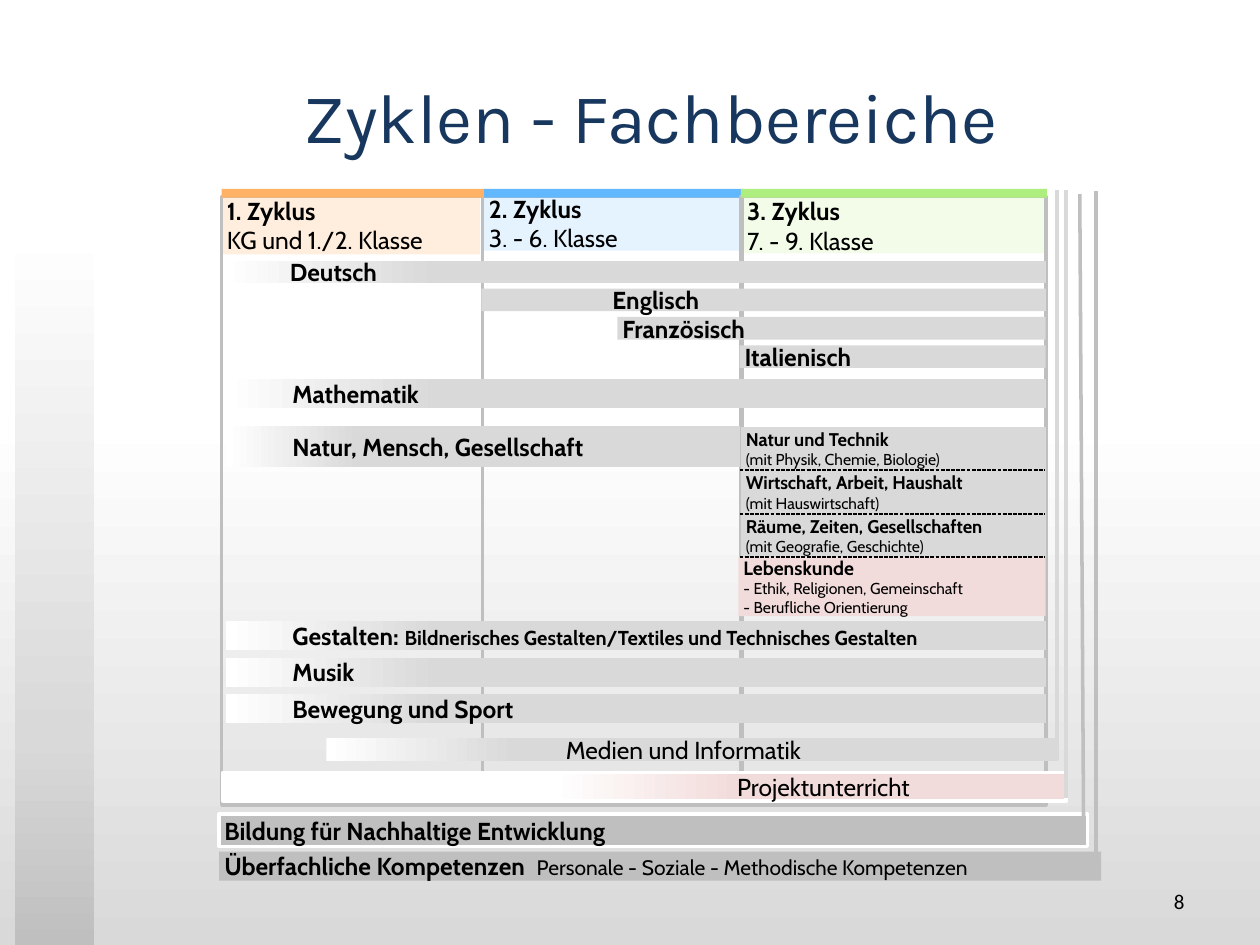
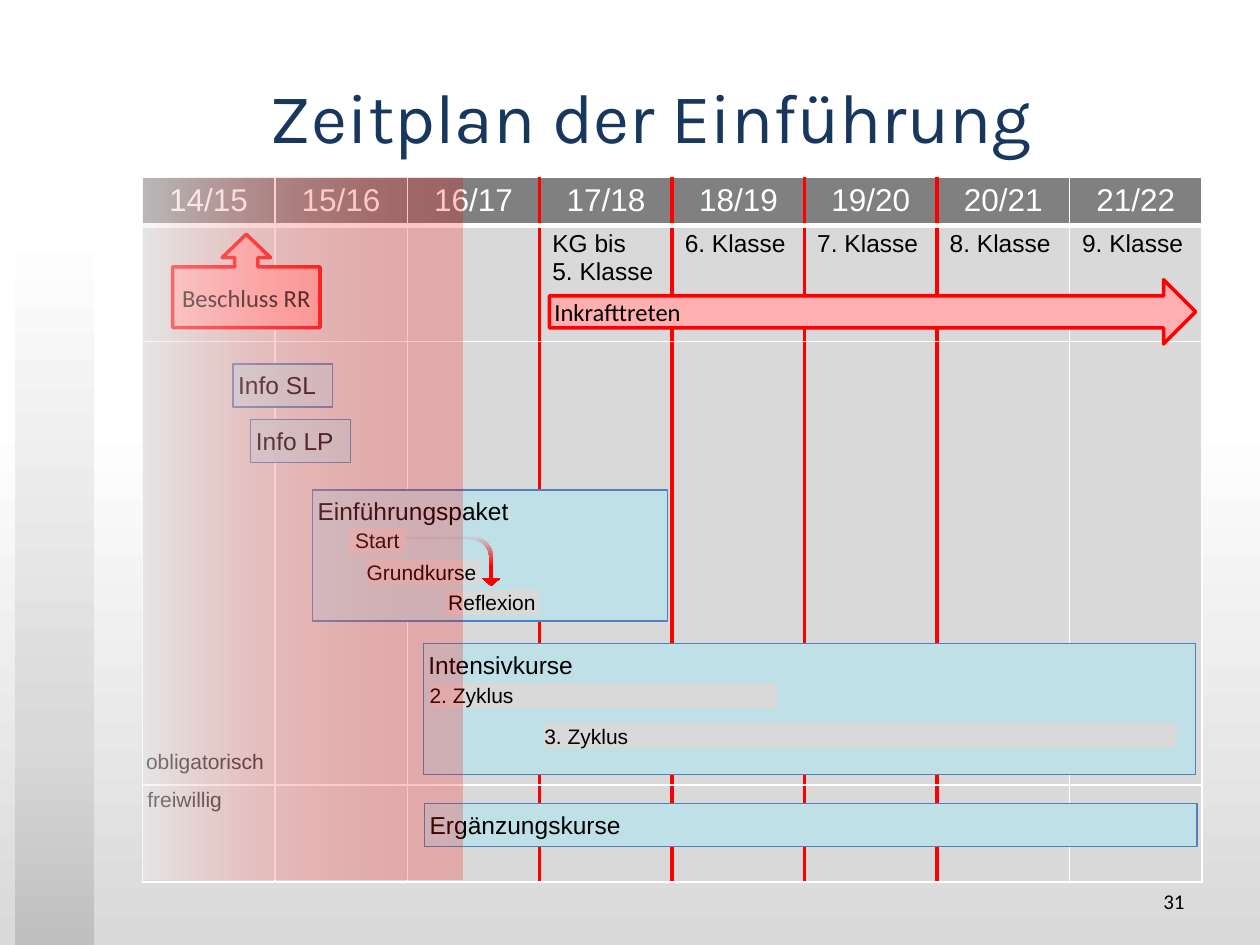
from dataclasses import dataclass
from typing import NamedTuple, Optional, Union

import pptx
import pptx.dml.color
import pptx.enum.dml
import pptx.enum.shapes
import pptx.enum.text
import pptx.oxml.ns
import pptx.util
from lxml import etree

RGBColor = pptx.dml.color.RGBColor
Preset = pptx.enum.shapes.MSO_SHAPE
Align = pptx.enum.text.PP_ALIGN
Anchor = pptx.enum.text.MSO_ANCHOR
qn = pptx.oxml.ns.qn

# Grid: 100 columns by 75 rows cover the slide
WIDTH, HEIGHT = pptx.util.Inches(10), pptx.util.Inches(7.5)
CELL = WIDTH // 100

# Colours
BLACK = RGBColor(0x00, 0x00, 0x00)
WHITE = RGBColor(0xFF, 0xFF, 0xFF)
NAVY = RGBColor(0x17, 0x37, 0x5E)
MIST = RGBColor(0xF2, 0xF2, 0xF2)
LIGHT = RGBColor(0xD9, 0xD9, 0xD9)
SILVER = RGBColor(0xBF, 0xBF, 0xBF)
GREY = RGBColor(0x80, 0x80, 0x80)
ROSE = RGBColor(0xF2, 0xDC, 0xDB)
RED = RGBColor(0xFF, 0x00, 0x00)
PINK = RGBColor(0xFF, 0xAF, 0xAF)
AQUA = RGBColor(0xBF, 0xE0, 0xE7)
STEEL = RGBColor(0x4F, 0x81, 0xBD)
ORANGE, CREAM = RGBColor(0xFF, 0xB2, 0x65), RGBColor(0xFF, 0xEE, 0xDD)
BLUE, ICE = RGBColor(0x61, 0xB8, 0xFF), RGBColor(0xE5, 0xF3, 0xFF)
GREEN, LIME = RGBColor(0xAE, 0xEE, 0x7E), RGBColor(0xF3, 0xFC, 0xE8)


class Area(NamedTuple):
    column: float
    row: float
    columns: float
    rows: float


class Stop(NamedTuple):
    position: int
    color: RGBColor
    opacity: int = 100


class Gradient(NamedTuple):
    stops: tuple[Stop, ...]
    angle: int = 0


class Span(NamedTuple):
    text: str
    size: float = 14
    bold: bool = True
    name: str = "Cabin"
    color: RGBColor = BLACK


class Edge(NamedTuple):
    color: RGBColor
    weight: float
    dash: Optional[pptx.enum.dml.MSO_LINE] = None


@dataclass(frozen=True)
class Box:
    area: Area
    lines: tuple[tuple[Span, ...], ...] = ()
    fill: Union[RGBColor, Gradient, None] = None
    edge: Optional[Edge] = None
    preset: Optional[Preset] = Preset.RECTANGLE
    align: Align = Align.LEFT
    anchor: Anchor = Anchor.MIDDLE
    inset: tuple[float, float] = (0.4, 0.4)
    indent: float = 0
    tab: float = 0
    adjust: tuple[float, ...] = ()
    turn: float = 0


BACKDROP = Gradient((Stop(0, WHITE), Stop(44, WHITE), Stop(100, LIGHT)), 90)
SIDE_BAND = Gradient((Stop(24, WHITE), Stop(78, LIGHT), Stop(100, SILVER)), 90)
FADE_IN = Gradient((Stop(0, WHITE), Stop(26, LIGHT), Stop(100, LIGHT)))
PROJECT_FADE = Gradient((Stop(39, WHITE), Stop(61, ROSE), Stop(100, ROSE)))
ARROW_FADE = Gradient((Stop(0, AQUA), Stop(61, RED)))
PAST_FADE = Gradient((Stop(0, MIST, 50), Stop(98, RED, 21)))
FRAME = Edge(SILVER, 2)


# Helpers
def grid(count: float) -> int:
    return round(count * CELL)


def apply(target, values: dict) -> None:
    for name, value in values.items():
        setattr(target, name, value)


def paint(owner, fill, look: Union[RGBColor, Gradient, None]) -> None:
    if look is None:
        fill.background()
    elif isinstance(look, RGBColor):
        fill.solid()
        fill.fore_color.rgb = look
    else:
        fill.gradient()
        gradient = next(owner.iter(qn("a:gradFill")))
        stops = gradient.find(qn("a:gsLst"))
        for old in list(stops):
            stops.remove(old)
        for stop in look.stops:
            mark = etree.SubElement(stops, qn("a:gs"), pos=str(stop.position * 1000))
            color = etree.SubElement(mark, qn("a:srgbClr"), val=str(stop.color))
            if stop.opacity < 100:
                etree.SubElement(color, qn("a:alpha"), val=str(stop.opacity * 1000))
        gradient.find(qn("a:lin")).set("ang", str(look.angle * 60000))


def write(frame, lines: tuple, align: Align, indent: float = 0, tab: float = 0) -> None:
    for index, spans in enumerate(lines):
        para = frame.add_paragraph() if index else frame.paragraphs[0]
        para.alignment = align
        properties = para._p.get_or_add_pPr()
        if indent:
            properties.set("marL", str(grid(indent)))
            properties.set("indent", "0")
        if tab:
            tabs = etree.SubElement(properties, qn("a:tabLst"))
            etree.SubElement(tabs, qn("a:tab"), pos=str(grid(tab)), algn="l")
        for span in spans:
            run = para.add_run()
            run.text = span.text
            apply(run.font, {"size": pptx.util.Pt(span.size), "bold": span.bold, "name": span.name})
            run.font.color.rgb = span.color


def draw_edge(line, edge: Optional[Edge]) -> None:
    if edge is None:
        line.fill.background()
        return
    line.color.rgb = edge.color
    line.width = pptx.util.Pt(edge.weight)
    if edge.dash is not None:
        line.dash_style = edge.dash


def draw_box(page, box: Box) -> None:
    place = [grid(value) for value in box.area]
    if box.preset is None:
        shape = page.shapes.add_textbox(*place)
    else:
        shape = page.shapes.add_shape(box.preset, *place)
        shape.shadow.inherit = False
        paint(shape._element.spPr, shape.fill, box.fill)
        draw_edge(shape.line, box.edge)
        for index, value in enumerate(box.adjust):
            shape.adjustments[index] = value
        shape.rotation = box.turn
    side, top = map(grid, box.inset)
    apply(shape.text_frame, {
        "word_wrap": True, "vertical_anchor": box.anchor,
        "margin_left": side, "margin_right": side, "margin_top": top, "margin_bottom": top})
    write(shape.text_frame, box.lines, box.align, box.indent, box.tab)


def draw_line(page, start: tuple[float, float], end: tuple[float, float], edge: Edge) -> None:
    line = page.shapes.add_connector(
        pptx.enum.shapes.MSO_CONNECTOR.STRAIGHT, *map(grid, start + end))
    draw_edge(line.line, edge)
    etree.SubElement(line._element.spPr, qn("a:effectLst"))


def border(cell, sides: dict[str, Edge]) -> None:
    properties = cell._tc.get_or_add_tcPr()
    for index, (side, edge) in enumerate(sides.items()):
        line = etree.Element(qn(f"a:ln{side}"), w=str(pptx.util.Pt(edge.weight)))
        solid = etree.SubElement(line, qn("a:solidFill"))
        etree.SubElement(solid, qn("a:srgbClr"), val=str(edge.color))
        properties.insert(index, line)


def new_page(deck, title: str, number: str):
    page = deck.slides.add_slide(deck.slide_layouts[6])
    paint(page._element, page.background.fill, BACKDROP)
    draw_box(page, Box(Area(1.2, -0.1, 6.3, 75.1), fill=SIDE_BAND))
    draw_box(page, Box(Area(8.3, 4.5, 86.7, 9.3), ((Span(title, 40, False, "Karla", NAVY),),),
                       preset=None, align=Align.CENTER, inset=(1, 0.5)))
    draw_box(page, Box(Area(71.7, 69.5, 23.3, 4), ((Span(number, 12, False, "Calibri"),),),
                       preset=None, align=Align.RIGHT, inset=(1, 0.5)))
    return page


# Slide: cycles and subjects
def subjects_page(deck) -> None:
    page = new_page(deck, "Zyklen - Fachbereiche", "8")
    right = 83

    # Cycle columns: headings first, then frames and coloured caps
    cycles = (
        ("2. Zyklus", "3. - 6. Klasse", Area(38.4, 15.5, 20.3, 4.4), ICE, BLUE, 38.3, 20.6),
        ("1. Zyklus", "KG und 1./2. Klasse", Area(17.6, 15.6, 20.5, 4.6), CREAM, ORANGE, 17.6, 20.7),
        ("3. Zyklus", "7. - 9. Klasse", Area(58.9, 15.7, 24.2, 4.4), LIME, GREEN, 58.8, 24.2),
    )
    for name, classes, area, tint, *_ in cycles:
        draw_box(page, Box(area, ((Span(name),), (Span(classes, bold=False),)), tint))
    for *_, cap, column, columns in cycles:
        draw_box(page, Box(Area(column, 15.6, columns, 48.3), edge=FRAME))
        draw_box(page, Box(Area(column, 15, columns + 0.1, 0.7), fill=cap))

    # Foreign languages, each starting later
    languages = (("Englisch", 38.2, 10), ("Französisch", 49, 0), ("Italienisch", 58.7, 0))
    for index, (name, column, indent) in enumerate(languages):
        draw_box(page, Box(Area(column, 22.9 + 2.25 * index, right - column, 1.8),
                           ((Span(name),),), LIGHT, indent=indent))

    # Subjects of the third cycle, divided by dashes
    fields = (
        (10.5, "Natur und Technik", "(mit Physik, Chemie, Biologie)"),
        (10.5, "Wirtschaft, Arbeit, Haushalt", "(mit Hauswirtschaft)"),
        (10.5, "Räume, Zeiten, Gesellschaften", "(mit Geografie, Geschichte)"),
        (11, "Lebenskunde", "- Ethik, Religionen, Gemeinschaft", "- Berufliche Orientierung"),
    )
    limits = (33.9, 37.3, 40.8, 44.2, 48.9)
    for (size, name, *details), top, bottom in zip(fields, limits, limits[1:]):
        last = name == "Lebenskunde"
        column = 58.6 if last else 58.8
        lines = ((Span(name, size),), *((Span(text, 9, False),) for text in details))
        draw_box(page, Box(Area(column, top, right - column, bottom - top), lines,
                           ROSE if last else LIGHT))

    # Subjects running through the cycles
    project = Box(Area(17.7, 61.3, 66.9, 2.3), ((Span("Projektunterricht", bold=False),),),
                  PROJECT_FADE, Edge(WHITE, 2), indent=40.4)
    media = Box(Area(25.9, 58.6, 58.1, 1.8), ((Span("Medien und Informatik", bold=False),),),
                FADE_IN, indent=18.6)
    design = (Span("Gestalten: "),
              Span("Bildnerisches Gestalten/Textiles und Technisches Gestalten", 11.5))
    arts = (design, (Span("Musik"),), (Span("Bewegung und Sport"),))
    subjects = [(Area(17.9, 49.3 + 2.9 * index, 65.1, 2.3), spans)
                for index, spans in enumerate(arts)]
    subjects += [
        (Area(17.9, 33.8, 40.8, 3.3), (Span("Natur, Mensch, Gesellschaft"),)),
        (Area(17.7, 20.7, 65.3, 1.8), (Span("Deutsch"),)),
        (Area(17.9, 30.1, 65.1, 2.3), (Span("Mathematik"),)),
    ]
    for box in (project, media):
        draw_box(page, box)
    for area, spans in subjects:
        draw_box(page, Box(area, (spans,), FADE_IN, indent=4.9))

    # Dividers and the rails down to the overarching topics
    dashes = Edge(BLACK, 0.75, pptx.enum.dml.MSO_LINE.SQUARE_DOT)
    for row in limits[1:-1]:
        draw_line(page, (58.7, row), (82.9, row), dashes)
    for column, bottom in ((83.9, 60.3), (84.6, 63.3)):
        draw_line(page, (column, 15.1), (column, bottom), Edge(LIGHT, 2))
    draw_box(page, Box(Area(17.4, 64.6, 68.9, 2.6),
                       ((Span("Bildung für Nachhaltige Entwicklung"),),), SILVER, Edge(WHITE, 2)))
    skills = (Span("Überfachliche Kompetenzen"),
              Span("\tPersonale - Soziale - Methodische Kompetenzen", 12, False))
    draw_box(page, Box(Area(17.4, 67.6, 70, 2.3), (skills,), SILVER, tab=24.8))
    draw_line(page, (85.7, 15.4), (86, 65.9), FRAME)
    draw_line(page, (87, 15.2), (87, 68.5), FRAME)


# Slide: timetable
def draw_years(page) -> None:
    years = [f"{year}/{year + 1}" for year in range(14, 22)]
    starts = {3: ("KG bis", "5. Klasse"), **{n: (f"{n + 2}. Klasse",) for n in range(4, 8)}}
    heights = (3.7, 9.2, 35.2, 7.7)
    place = Area(11.3, 14.1, 84.1, sum(heights))
    table = page.shapes.add_table(len(heights), len(years), *map(grid, place)).table
    apply(table, {"first_row": False, "horz_banding": False})
    for column in table.columns:
        column.width = grid(place.columns / len(years))
    thin, start_line = Edge(WHITE, 1), Edge(RED, 2.25)
    for row, height in enumerate(heights):
        table.rows[row].height = grid(height)
        for column, year in enumerate(years):
            cell = table.cell(row, column)
            apply(cell, {"margin_top": grid(0.4), "margin_bottom": grid(0.4)})
            cell.fill.solid()
            cell.fill.fore_color.rgb = LIGHT if row else GREY
            border(cell, {
                "L": start_line if 3 <= column <= 6 else thin,
                "R": start_line if 2 <= column <= 5 else thin,
                "T": Edge(WHITE, 3) if row == 1 else thin,
                "B": thin if row else Edge(WHITE, 3)})
            if row == 0:
                write(cell.text_frame, ((Span(year, 18, False, "Arial", WHITE),),), Align.CENTER)
            elif row == 1 and column in starts:
                lines = tuple((Span(text, 14, False, "Arial"),) for text in starts[column])
                write(cell.text_frame, lines, Align.LEFT)


def course(text: str, area: Area) -> Box:
    return Box(area, ((Span(text, 14, False, "Arial"),),), AQUA, Edge(STEEL, 0.75),
               anchor=Anchor.TOP, inset=(0.4, 0.5))


def label(text: str, column: float, row: float, columns: float,
          align: Align = Align.LEFT, preset: Optional[Preset] = Preset.RECTANGLE) -> Box:
    return Box(Area(column, row, columns, 2), ((Span(text, 12, False, "Arial"),),), LIGHT,
               preset=preset, align=align, anchor=Anchor.TOP, inset=(0, 0))


def timetable_page(deck) -> None:
    page = new_page(deck, "Zeitplan der Einführung", "31")
    draw_years(page)
    boxes = (
        # Decision and entry into force
        Box(Area(13.7, 18.6, 11.7, 7.4), ((Span("Beschluss RR", 14, False, "Calibri"),),), PINK,
            Edge(RED, 2), Preset.UP_ARROW_CALLOUT, Align.CENTER, adjust=(0.25, 0.26, 0.25, 0.65)),
        Box(Area(43.6, 22.2, 51.3, 5.1), ((Span("Inkrafttreten", 14, False, "Calibri"),),), PINK,
            Edge(RED, 2), Preset.RIGHT_ARROW),
        # Information and introduction
        course("Info SL", Area(18.5, 28.9, 7.9, 3.4)),
        course("Info LP", Area(19.9, 33.3, 7.9, 3.4)),
        course("Einführungspaket", Area(24.8, 38.9, 28.2, 10.4)),
        Box(Area(33.8, 40.6, 4, 7.8), fill=ARROW_FADE, preset=Preset.BENT_ARROW,
            adjust=(0.07, 0.18, 0.15, 0.44), turn=90),
        label("Start", 27.7, 41.9, 4.5, Align.CENTER),
        label("Reflexion", 35.3, 46.8, 7.5, Align.CENTER),
        # Courses
        course("Intensivkurse", Area(33.6, 51.1, 61.3, 10.4)),
        label("2. Zyklus", 34.1, 54.2, 27.6),
        label("3. Zyklus", 43.2, 57.4, 50.2),
        course("Ergänzungskurse", Area(33.7, 63.8, 61.3, 3.4)),
        label("obligatorisch", 11.6, 59.4, 10.4, preset=None),
        label("freiwillig", 11.7, 62.4, 10.4, preset=None),
        label("Grundkurse", 29.1, 44.4, 9.1),
        # Veil over the time already past
        Box(Area(11.3, 14.1, 25.4, 55.7), fill=PAST_FADE),
    )
    for box in boxes:
        draw_box(page, box)


def main() -> None:
    deck = pptx.Presentation()
    apply(deck, {"slide_width": WIDTH, "slide_height": HEIGHT})
    subjects_page(deck)
    timetable_page(deck)
    deck.save("out.pptx")


if __name__ == "__main__":
    main()
